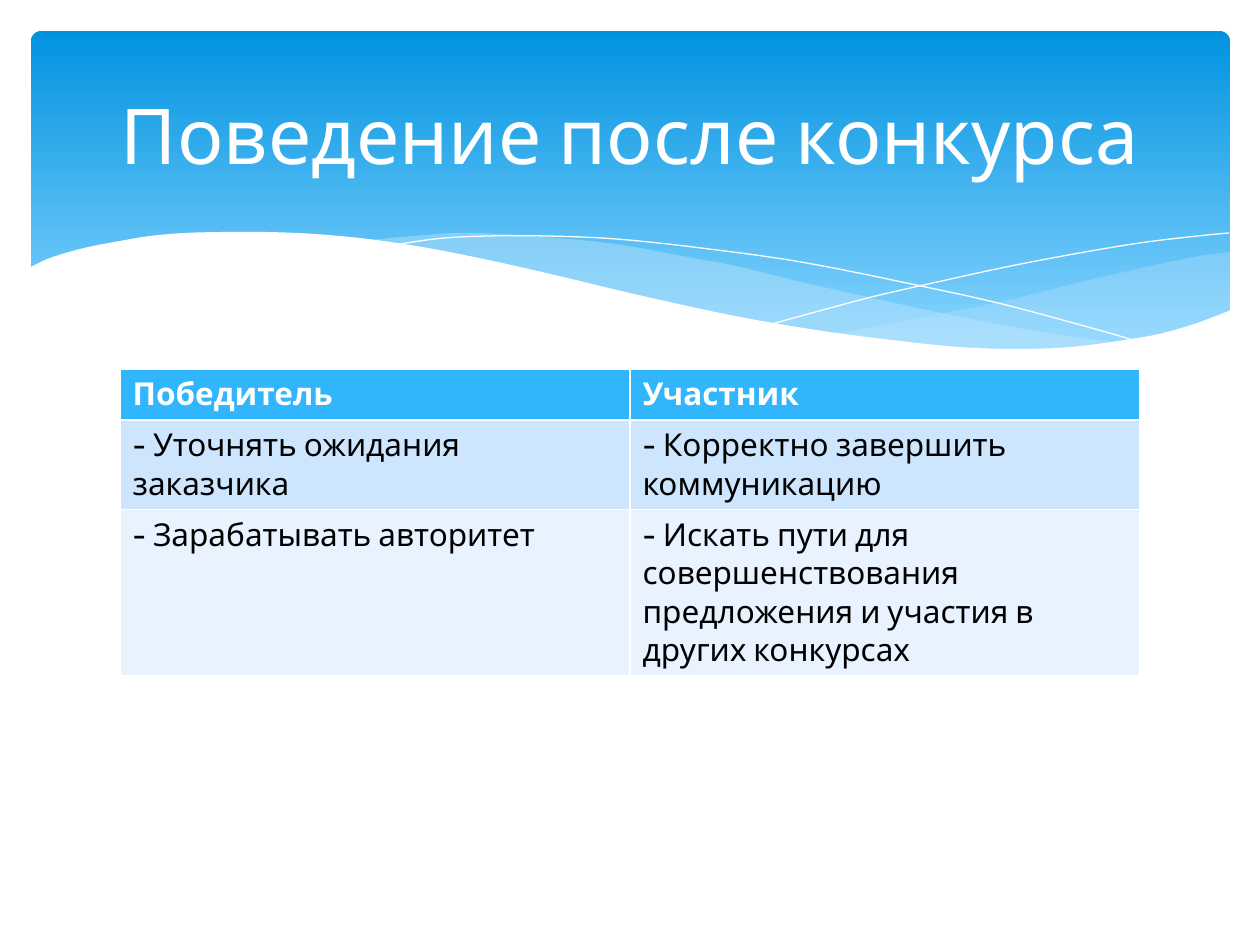
from dataclasses import dataclass

from lxml.etree import SubElement
from pptx import Presentation
from pptx.dml.color import RGBColor
from pptx.enum.shapes import MSO_SHAPE as Shape
from pptx.enum.text import MSO_ANCHOR as Anchor, PP_ALIGN as Align
from pptx.oxml.ns import qn
from pptx.util import Emu, Pt

Point = tuple[int, int]
SCALE = 914400 / 126
WHITE = "FFFFFF"
MIST = "C6E7FC"


@dataclass
class Wave:
    """A shape bounded by smooth curves, or one open line if it has no fill."""
    curves: list[list[Point]]
    fill: str | None = None
    alpha: int = 100


@dataclass
class Row:
    cells: tuple[str, str]
    fill: str
    ink: str = "000000"
    bold: bool = False


WAVES = [
    # Pale swell on the right
    Wave([[(1230, 252), (1194, 257), (1142, 268), (1085, 281), (1014, 299),
           (949, 312), (890, 324), (833, 334)],
          [(833, 334), (888, 341), (954, 348), (1012, 350), (1076, 348),
           (1130, 340), (1178, 330), (1213, 318), (1230, 311)]], MIST, 29),
    # Pale swell in the middle
    Wave([[(360, 241), (413, 236), (455, 233), (503, 234), (557, 238),
           (616, 244), (682, 256), (736, 266), (793, 280), (890, 302),
           (976, 320), (1055, 334), (1125, 344)],
          [(1125, 344), (1080, 349), (1017, 350), (959, 349), (893, 343),
           (819, 333), (736, 318), (668, 302), (566, 280), (509, 266),
           (456, 256), (407, 247), (360, 241)]], MIST, 40),
    # Two thin crossing lines
    Wave([[(389, 246), (413, 242), (445, 238), (488, 236), (546, 236),
           (616, 239), (701, 248), (801, 262), (916, 285), (1002, 304),
           (1095, 329), (1143, 343)]]),
    Wave([[(772, 324), (823, 310), (876, 296), (942, 281), (1016, 265),
           (1091, 251), (1147, 242), (1198, 236), (1229, 233)]]),
    # White foreground wave
    Wave([[(1231, 310), (1197, 323), (1159, 334), (1118, 341), (1071, 347),
           (1019, 349), (959, 347), (892, 340), (816, 330), (730, 315),
           (634, 294), (563, 277), (493, 261), (428, 248), (368, 239),
           (315, 234), (266, 232), (223, 232), (184, 233), (150, 236),
           (120, 241), (84, 248), (50, 258), (29, 268)],
          [(29, 415), (1231, 415)]], WHITE),
]

ROWS = [
    Row(("Победитель", "Участник"), "31B6FD", WHITE, True),
    Row(("- Уточнять ожидания заказчика",
         "- Корректно завершить коммуникацию"), "CEE5FE"),
    Row(("- Зарабатывать авторитет",
         "- Искать пути для совершенствования предложения "
         "и участия в других конкурсах"), "E8F3FF"),
]


def px(size: float) -> Emu:
    return Emu(round(size * SCALE))


def color(code: str) -> RGBColor:
    return RGBColor.from_string(code)


def write(frame, text: str, *, size: int, ink: str, bold: bool = False,
          align=Align.LEFT) -> None:
    para = frame.paragraphs[0]
    para.alignment = align
    run = para.add_run()
    run.text = text
    font = run.font
    font.name, font.size, font.bold = "Cabin", Pt(size), bold
    font.color.rgb = color(ink)


def smooth(knots: list[Point], steps: int = 6) -> list[tuple[Emu, Emu]]:
    """Run a Catmull-Rom curve through the knots."""
    ends = [knots[0], *knots, knots[-1]]
    dots = [knots[0]]
    for a, b, c, d in zip(ends, ends[1:], ends[2:], ends[3:]):
        for step in range(1, steps + 1):
            t = step / steps
            dots.append(tuple(
                (2 * q + (r - p) * t + (2 * p - 5 * q + 4 * r - s) * t ** 2
                 + (3 * q - p - 3 * r + s) * t ** 3) / 2
                for p, q, r, s in zip(a, b, c, d)))
    return [(px(x), px(y)) for x, y in dots]


def draw_wave(shapes, wave: Wave) -> None:
    dots = [dot for curve in wave.curves for dot in smooth(curve)]
    pen = shapes.build_freeform(*dots[0])
    pen.add_line_segments(dots[1:], close=wave.fill is not None)
    shape = pen.convert_to_shape()
    shape.shadow.inherit = False
    if wave.fill is None:
        shape.fill.background()
        shape.line.color.rgb = color(WHITE)
        shape.line.width = Pt(0)
        return
    shape.line.fill.background()
    shape.fill.solid()
    shape.fill.fore_color.rgb = color(wave.fill)
    if wave.alpha < 100:
        tone = shape.fill._xPr.find(".//" + qn("a:srgbClr"))
        SubElement(tone, qn("a:alpha"), val=str(wave.alpha * 1000))


def draw_panel(shapes) -> None:
    panel = shapes.add_shape(Shape.ROUNDED_RECTANGLE,
                             px(31), px(31), px(1199), px(340))
    panel.adjustments[0] = 0.03
    panel.shadow.inherit = False
    panel.line.fill.background()
    panel.fill.gradient()
    panel.fill.gradient_angle = 270
    tones = [(0, "0293E0"), (0.9, "83D3FE")]
    for stop, (place, code) in zip(panel.fill.gradient_stops, tones):
        stop.position = place
        stop.color.rgb = color(code)


def draw_title(shapes, text: str) -> None:
    title = shapes.title
    title.left, title.top = px(63), px(47)
    title.width, title.height = px(1134), px(173)
    title.text_frame.vertical_anchor = Anchor.MIDDLE
    write(title.text_frame, text, size=44, ink=WHITE, align=Align.CENTER)
    shapes._spTree.append(title._element)  # bring in front of the panel


def draw_table(shapes, rows: list[Row]) -> None:
    high = 51
    table = shapes.add_table(len(rows), 2, px(120), px(369), px(1020),
                             px(high * len(rows))).table
    for line, row in zip(table.rows, rows):
        for cell, text in zip(line.cells, row.cells):
            cell.fill.solid()
            cell.fill.fore_color.rgb = color(row.fill)
            write(cell.text_frame, text, size=18, ink=row.ink, bold=row.bold)


def main() -> None:
    deck = Presentation()
    deck.slide_width, deck.slide_height = px(1260), px(945)
    shapes = deck.slides.add_slide(deck.slide_layouts[5]).shapes
    # Header backdrop
    draw_panel(shapes)
    for wave in WAVES:
        draw_wave(shapes, wave)
    # Content
    draw_title(shapes, "Поведение после конкурса")
    draw_table(shapes, ROWS)
    deck.save("out.pptx")


if __name__ == "__main__":
    main()
